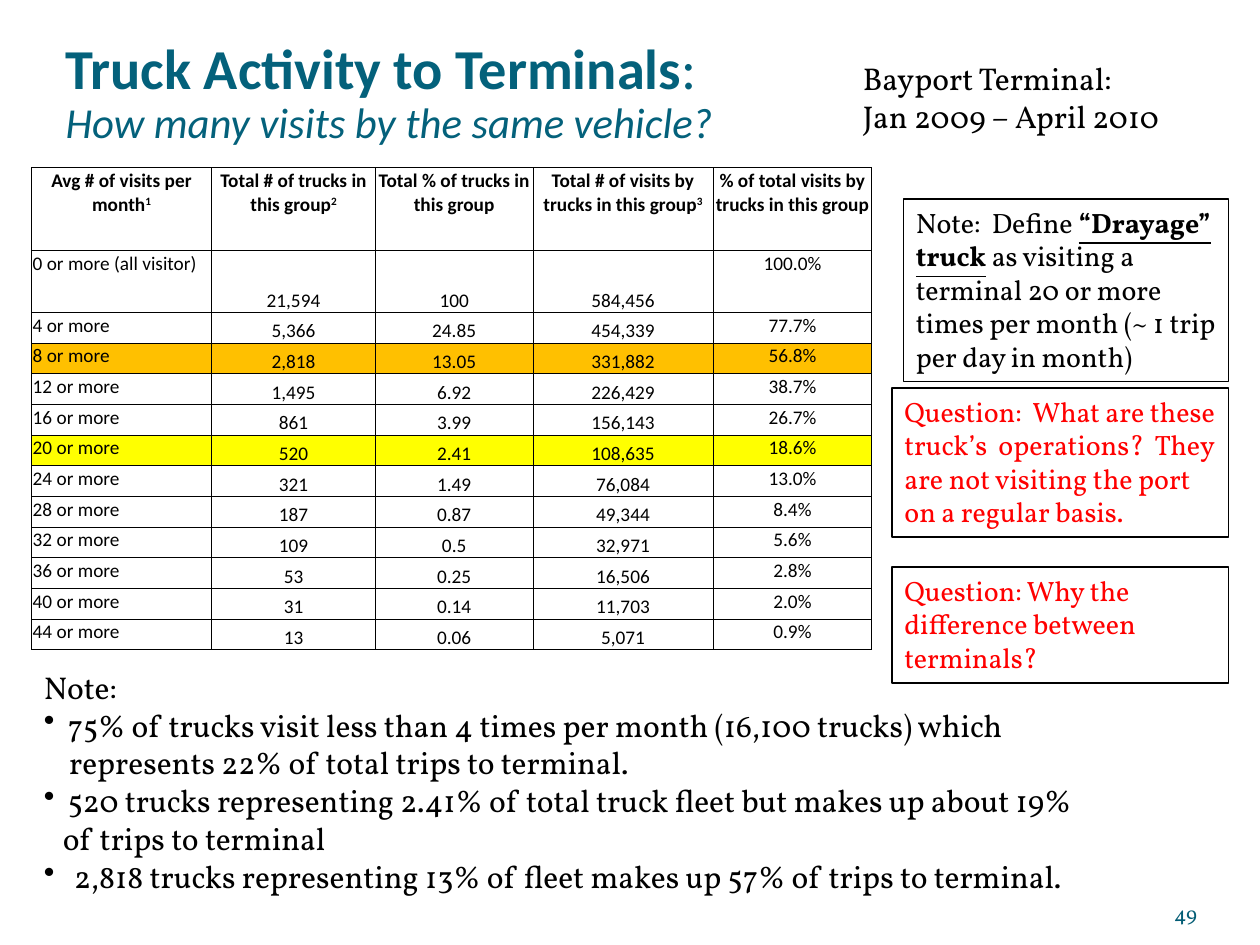
import pptx
import pptx.dml.color
import pptx.enum.shapes
import pptx.enum.text
import pptx.oxml
import pptx.oxml.ns
import pptx.util
from pptx.util import Inches

ALIGN = pptx.enum.text.PP_ALIGN
ANCHOR = pptx.enum.text.MSO_ANCHOR
FIT = pptx.enum.text.MSO_AUTO_SIZE
BLACK, RED, TEAL = "000000", "FF0000", "04617B"


def rgb(value):
    return pptx.dml.color.RGBColor.from_string(value)


class SlideBuilder:
    serif, sans = "Vollkorn", "Calibri"

    def __init__(self, prs):
        self.s = prs.slides.add_slide(prs.slide_layouts[5])

    def run(self, p, text, size, color=BLACK, font=None, sup=False, **style):
        r = p.add_run()
        r.text = text
        values = {"name": font or self.serif, "size": pptx.util.Pt(size), **style}
        for name, value in values.items():
            setattr(r.font, name, value)
        r.font.color.rgb = rgb(color)
        if sup:
            r._r.get_or_add_rPr().set("baseline", "30000")

    def frame(self, sp, anchor=ANCHOR.TOP, fit=FIT.NONE, inset=None):
        tf = sp.text_frame
        values = {"word_wrap": True, "auto_size": fit, "vertical_anchor": anchor}
        if inset is not None:
            for side in ("left", "top", "right", "bottom"):
                values["margin_" + side] = Inches(inset)
        for name, value in values.items():
            setattr(tf, name, value)
        return tf

    def title(self, box, main, subtitle):
        sp = self.s.shapes.title
        sp.left, sp.top, sp.width, sp.height = map(Inches, box)
        p = self.frame(sp, ANCHOR.MIDDLE).paragraphs[0]
        p.alignment, p.line_spacing = ALIGN.LEFT, 0.9
        self.run(p, main, 32.2, TEAL, self.sans, bold=True)
        self.run(p, ":", 32.2, TEAL, self.sans, bold=False)
        p.add_line_break()
        self.run(p, subtitle, 24.4, TEAL, self.sans, bold=False, italic=True)

    def text(self, box, lines, size=18, color=BLACK, align=ALIGN.LEFT, **frame):
        """Each line is (text, indent in inches, bulleted)."""
        tf = self.frame(self.s.shapes.add_textbox(*map(Inches, box)), **frame)
        for i, (text, indent, bulleted) in enumerate(lines):
            p = tf.add_paragraph() if i else tf.paragraphs[0]
            p.alignment = align
            if indent:
                pPr = p._p.get_or_add_pPr()
                pPr.set("marL", str(Inches(indent)))
                pPr.set("indent", str(-Inches(indent) if bulleted else 0))
                if bulleted:
                    bullet = pptx.oxml.parse_xml(
                        f'<a:buChar {pptx.oxml.ns.nsdecls("a")} char="•"/>')
                    pPr.append(bullet)
            self.run(p, text, size, color)

    def callout(self, box, runs, color=BLACK, line=0.75):
        sp = self.s.shapes.add_shape(
            pptx.enum.shapes.MSO_SHAPE.RECTANGLE, *map(Inches, box))
        sp.shadow.inherit = False
        sp.fill.background()
        sp.line.color.rgb = rgb(BLACK)
        sp.line.width = pptx.util.Pt(line)
        p = self.frame(sp, fit=FIT.SHAPE_TO_FIT_TEXT).paragraphs[0]
        p.alignment = ALIGN.LEFT
        for text, style in runs:
            self.run(p, text, 16, color, **style)

    def cell(self, cell, text, note="", bold=False, fill=None,
             align=ALIGN.CENTER, anchor=ANCHOR.TOP):
        edge = Inches(0.01)
        values = {"margin_left": edge, "margin_top": edge, "margin_right": edge,
                  "margin_bottom": 0, "vertical_anchor": anchor}
        for name, value in values.items():
            setattr(cell, name, value)
        p = cell.text_frame.paragraphs[0]
        p.alignment = align
        self.run(p, text, 11, font=self.sans, bold=bold)
        if note:
            self.run(p, note, 11, font=self.sans, bold=bold, sup=True)
        # Borders precede the fill in the cell properties
        tcPr = cell._tc.get_or_add_tcPr()
        for side in "LRTB":
            tcPr.append(pptx.oxml.parse_xml(
                f'<a:ln{side} {pptx.oxml.ns.nsdecls("a")} w="6350"><a:solidFill>'
                f'<a:srgbClr val="{BLACK}"/></a:solidFill></a:ln{side}>'))
        if fill:
            cell.fill.solid()
            cell.fill.fore_color.rgb = rgb(fill)
        else:
            cell.fill.background()

    def table(self, box, widths, heights, header, rows, highlights):
        table = self.s.shapes.add_table(
            len(rows) + 1, len(header), *map(Inches, box)).table
        table.first_row = table.horz_banding = False
        for column, width in zip(table.columns, widths):
            column.width = Inches(width)
        for row, height in zip(table.rows, heights):
            row.height = Inches(height)
        for c, (text, note) in enumerate(header):
            self.cell(table.cell(0, c), text, note, bold=True)
        for i, row in enumerate(rows, 1):
            for c, text in enumerate(row):
                self.cell(table.cell(i, c), text, fill=highlights.get(row[0]),
                          align=ALIGN.CENTER if c else ALIGN.LEFT,
                          anchor=ANCHOR.BOTTOM if c in (1, 2, 3) else ANCHOR.TOP)


HEADER = [
    ("Avg # of visits per month", "1"),
    ("Total # of trucks in this group", "2"),
    ("Total % of trucks in this group", ""),
    ("Total # of visits by trucks in this group", "3"),
    ("% of total visits by trucks in this group", ""),
]
VISITS = [
    ("21,594", "100", "584,456", "100.0%"),
    ("5,366", "24.85", "454,339", "77.7%"),
    ("2,818", "13.05", "331,882", "56.8%"),
    ("1,495", "6.92", "226,429", "38.7%"),
    ("861", "3.99", "156,143", "26.7%"),
    ("520", "2.41", "108,635", "18.6%"),
    ("321", "1.49", "76,084", "13.0%"),
    ("187", "0.87", "49,344", "8.4%"),
    ("109", "0.5", "32,971", "5.6%"),
    ("53", "0.25", "16,506", "2.8%"),
    ("31", "0.14", "11,703", "2.0%"),
    ("13", "0.06", "5,071", "0.9%"),
]
NOTES = [
    ("Note:", 0, False),
    ("75% of trucks visit less than 4 times per month (16,100 trucks) which", 0.19, True),
    ("represents 22% of total trips to terminal.", 0.2, False),
    ("520 trucks representing 2.41% of total truck fleet but makes up about 19%", 0.19, True),
    ("of trips to terminal", 0.15, False),
    ("2,818 trucks representing 13% of fleet makes up 57% of trips to terminal.", 0.24, True),
]


def main():
    prs = pptx.Presentation()
    prs.slide_width, prs.slide_height = Inches(10), Inches(7.5)
    b = SlideBuilder(prs)

    # Heading and page number
    b.text((8.67, 6.95, 0.83, 0.4), [("49", 0, False)], 12, "045D75",
           ALIGN.RIGHT, anchor=ANCHOR.BOTTOM, inset=0)
    b.title((0.42, 0.25, 5.67, 1), "Truck Activity to Terminals",
            "How many visits by the same vehicle?")
    b.text((6.75, 0.42, 2.75, 0.71),
           [("Bayport Terminal:", 0, False), ("Jan 2009 – April 2010", 0, False)],
           fit=FIT.SHAPE_TO_FIT_TEXT)

    # Notes below the table
    b.text((0.25, 5.25, 9, 1.92), NOTES, fit=FIT.SHAPE_TO_FIT_TEXT)

    # Visits table: the groups go up in steps of four
    rows = [(f"{4 * i} or more" + ("" if i else " (all visitor)"), *values)
            for i, values in enumerate(VISITS)]
    top_rows = [0.66, 0.49]
    row_height = (3.83 - sum(top_rows)) / (len(rows) - 1)
    b.table((0.25, 1.33, 6.67, 3.83), [1.43, 1.3, 1.25, 1.43, 1.26],
            top_rows + [row_height] * (len(rows) - 1), HEADER, rows,
            {"8 or more": "FFC000", "20 or more": "FFFF00"})

    # Callouts on the right
    b.callout((7.17, 1.58, 2.58, 1.45), [
        ("Note:  Define ", {}),
        ("“Drayage” truck", {"bold": True, "underline": True}),
        (" as visiting a terminal 20 or more times per month"
         " (~ 1 trip per day in month)", {})])
    b.callout((7.08, 4.5, 2.67, 0.92),
              [("Question: Why the difference between terminals?", {})], RED)
    b.callout((7.08, 3.08, 2.67, 1.18),
              [("Question:  What are these truck’s  operations?  They are not"
                " visiting the port on a regular basis.", {})], RED, line=1)

    prs.save("out.pptx")


if __name__ == "__main__":
    main()
